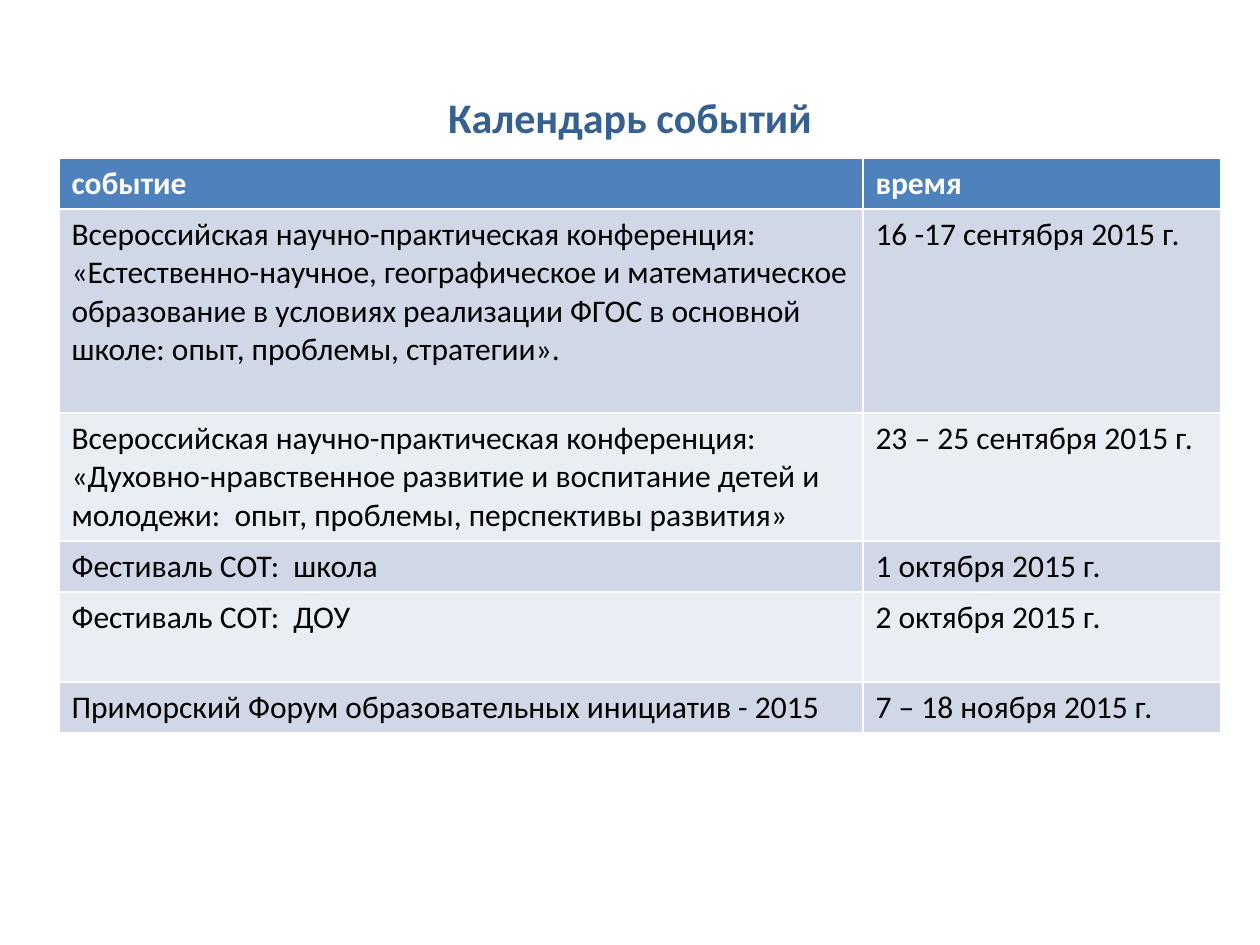
from pptx import Presentation
from pptx.dml.color import RGBColor
from pptx.enum.text import MSO_ANCHOR, PP_ALIGN
from pptx.util import Pt

PX = 914400 / 126
CENTER = PP_ALIGN.CENTER
MIDDLE = MSO_ANCHOR.MIDDLE
FONT = "Calibri"
TITLE_ONLY = 5

HEADING = ("событие", "время")
EVENTS = [
    ("Всероссийская научно-практическая конференция: «Естественно-научное, "
     "географическое и математическое образование в условиях реализации ФГОС "
     "в основной школе: опыт, проблемы, стратегии».", "16 -17 сентября 2015 г."),
    ("Всероссийская научно-практическая конференция: «Духовно-нравственное "
     "развитие и воспитание детей и молодежи:  опыт, проблемы, перспективы "
     "развития»", "23 – 25 сентября 2015 г."),
    ("Фестиваль СОТ:  школа", "1 октября 2015 г."),
    ("Фестиваль СОТ:  ДОУ", "2 октября 2015 г."),
    ("Приморский Форум образовательных инициатив - 2015", "7 – 18 ноября 2015 г."),
]
BANDS = ("D0D8E8", "E9EDF4")
COLUMN_WIDTHS = (804, 358)
ROW_HEIGHTS = (51, 204, 128, 51, 90, 51)


def px(length):
    return round(length * PX)


def color(value):
    return RGBColor.from_string(value)


def add_run(paragraph, text, size, ink, bold):
    run = paragraph.add_run()
    run.text = text
    run.font.name = FONT
    run.font.size = Pt(size)
    run.font.bold = bold
    run.font.color.rgb = color(ink)


def place_title(slide, left, top, width, height):
    title = slide.shapes.title
    title.left, title.top = px(left), px(top)
    title.width, title.height = px(width), px(height)
    title.text_frame.vertical_anchor = MIDDLE
    heading = title.text_frame.paragraphs[0]
    heading.alignment = CENTER
    add_run(heading, "Календарь событий", 24, "376092", True)


def place_calendar(slide, left, top):
    rows = [HEADING, *EVENTS]
    calendar = slide.shapes.add_table(
        len(rows), len(HEADING), px(left), px(top),
        px(sum(COLUMN_WIDTHS)), px(sum(ROW_HEIGHTS))).table
    for column, width in zip(calendar.columns, COLUMN_WIDTHS):
        column.width = px(width)
    for index, (row, texts, height) in enumerate(zip(calendar.rows, rows, ROW_HEIGHTS)):
        row.height = px(height)
        is_heading = index == 0
        band = "4F81BD" if is_heading else BANDS[(index - 1) % 2]
        ink = "FFFFFF" if is_heading else "000000"
        for cell, text in zip(row.cells, texts):
            cell.fill.solid()
            cell.fill.fore_color.rgb = color(band)
            add_run(cell.text_frame.paragraphs[0], text, 18, ink, is_heading)


def main():
    presentation = Presentation()
    presentation.slide_width = px(1260)
    presentation.slide_height = px(945)
    slide = presentation.slides.add_slide(presentation.slide_layouts[TITLE_ONLY])
    place_title(slide, 63, 38, 1134, 157)
    place_calendar(slide, 59, 158)
    presentation.save("out.pptx")


if __name__ == "__main__":
    main()
